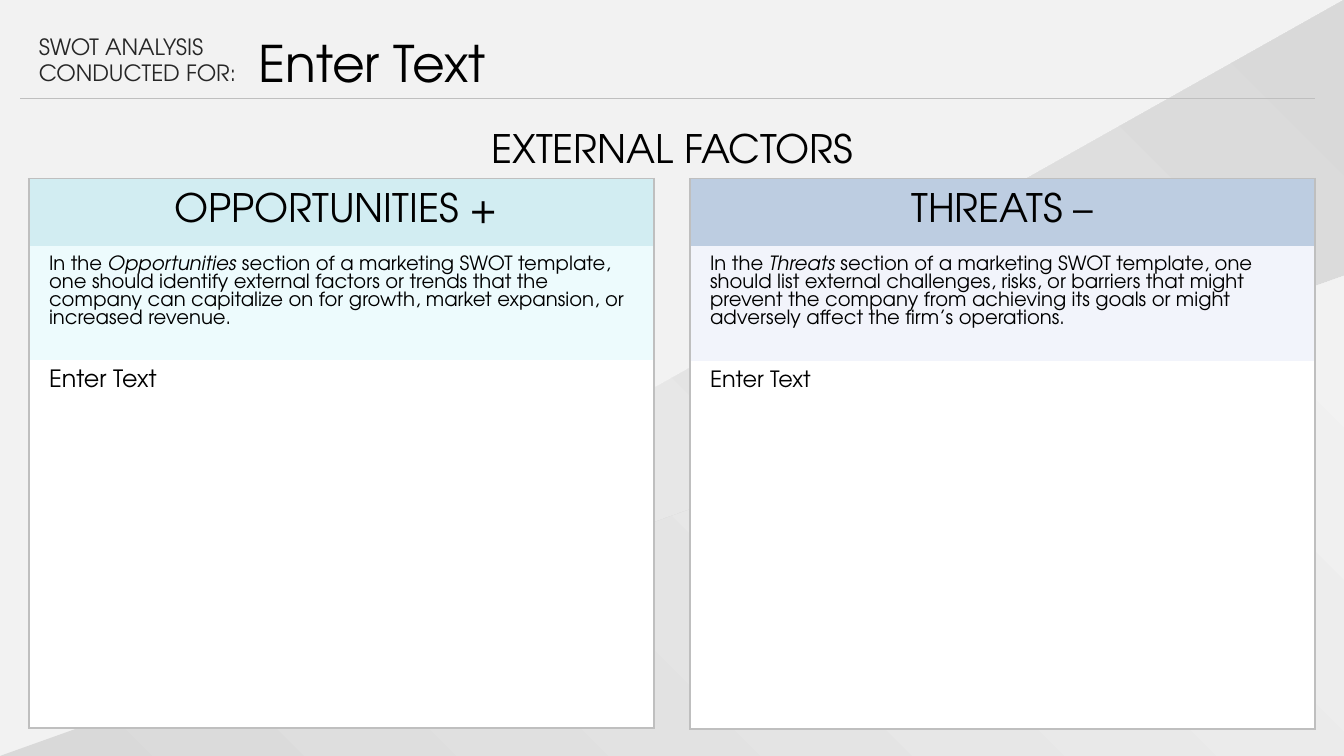
"""Build the external factors slide of a SWOT analysis."""
from lxml import etree
from pptx import Presentation
from pptx.dml.color import RGBColor
from pptx.enum.shapes import MSO_CONNECTOR, MSO_SHAPE
from pptx.enum.text import MSO_ANCHOR, PP_ALIGN
from pptx.oxml import parse_xml
from pptx.oxml.ns import qn
from pptx.util import Pt

LINE = MSO_CONNECTOR.STRAIGHT
WEDGE = MSO_SHAPE.RIGHT_TRIANGLE
TOP, MIDDLE = MSO_ANCHOR.TOP, MSO_ANCHOR.MIDDLE
LEFT, CENTER = PP_ALIGN.LEFT, PP_ALIGN.CENTER
FONT = "TeX Gyre Adventor"
GREY = "BFBFBF"
NS = "http://schemas.openxmlformats.org/drawingml/2006/main"


def paint(hue):
    return RGBColor.from_string(hue)


def write(frame, text, size, hue="000000", align=LEFT, italic="", gap=0):
    frame.word_wrap = True
    para = frame.paragraphs[0]
    para.alignment = align
    para.space_after = Pt(gap)
    parts = text.partition(italic) if italic else [text]
    for part in parts:
        run = para.add_run()
        run.text = part
        run.font.name = FONT
        run.font.size = Pt(size)
        run.font.italic = part == italic
        run.font.color.rgb = paint(hue)


deck = Presentation()
deck.slide_width, deck.slide_height = Pt(960), Pt(540)
slide = deck.slides.add_slide(deck.slide_layouts[6])
slide.background.fill.solid()
slide.background.fill.fore_color.rgb = paint("F2F2F2")
shapes = slide.shapes

for top, high, hues in [(0, 540, ("F2F2F2", "D9D9D9")), (197, 343, ("D9D9D9", "F2F2F2"))]:
    wedge = shapes.add_shape(WEDGE, 0, Pt(top), Pt(960), Pt(high))
    wedge.shadow.inherit = False
    wedge.line.fill.background()
    wedge.element.spPr.get_or_add_xfrm().set("flipH", "1")
    wedge.fill.gradient()
    wedge.fill.gradient_angle = 135
    for stop, hue, spot in zip(wedge.fill.gradient_stops, hues, (0, 1)):
        stop.color.rgb = paint(hue)
        stop.position = spot

labels = [
    (20.6, 19.8, 171, 46, "SWOT ANALYSIS CONDUCTED FOR:", 16, "262626", LEFT),
    (177.6, 19.5, 734, 51, "Enter Text", 36, "000000", LEFT),
    (20.6, 85, 919, 41, "EXTERNAL FACTORS", 28, "000000", CENTER),
]
for left, top, wide, high, text, size, hue, align in labels:
    box = shapes.add_textbox(Pt(left), Pt(top), Pt(wide), Pt(high))
    write(box.text_frame, text, size, hue, align)

rule = shapes.add_connector(LINE, Pt(14.5), Pt(70), Pt(939.5), Pt(70))
rule.line.color.rgb = paint(GREY)
rule.line.width = Pt(0.5)
etree.SubElement(rule.element.spPr, qn("a:effectLst"))

panels = [
    (20.6, "OPPORTUNITIES + ", "Opportunities",
     "In the Opportunities section of a marketing SWOT template, one should identify "
     "external factors or trends that the company can capitalize on for growth, "
     "market expansion, or increased revenue.", 17,
     ("D2EDF2", "EDFBFD", "FFFFFF"), (48, 81.6, 262.8)),
    (492.8, "THREATS –", "Threats",
     "In the Threats section of a marketing SWOT template, one should list external "
     "challenges, risks, or barriers that might prevent the company from achieving "
     "its goals or might adversely affect the firm’s operations.", 16,
     ("BDCDE1", "F2F4FB", "FFFFFF"), (48, 82.2, 262.8)),
]
for left, title, term, about, size, hues, heights in panels:
    table = shapes.add_table(3, 1, Pt(left), Pt(127.5), Pt(446.5), Pt(sum(heights))).table
    texts = [
        (title, 28, {"align": CENTER}),
        (about, 14, {"italic": term}),
        ("Enter Text", size, {"gap": 6}),
    ]
    for row, (text, points, style) in enumerate(texts):
        table.rows[row].height = Pt(heights[row])
        cell = table.cell(row, 0)
        cell.margin_left = cell.margin_right = Pt(14.4)
        cell.margin_top = cell.margin_bottom = Pt(7.2 if row else 0)
        cell.vertical_anchor = TOP if row else MIDDLE
        cell.fill.solid()
        cell.fill.fore_color.rgb = paint(hues[row])
        write(cell.text_frame, text, points, **style)
        edges = {"L": 1.5, "R": 1.5, "T": 0 if row else 1, "B": 1.5 if row == 2 else 0}
        for spot, (side, width) in enumerate(edges.items()):
            ink = f'<a:solidFill><a:srgbClr val="{GREY}"/></a:solidFill>' if width else "<a:noFill/>"
            edge = parse_xml(f'<a:ln{side} xmlns:a="{NS}" w="{Pt(width)}">{ink}</a:ln{side}>')
            cell._tc.get_or_add_tcPr().insert(spot, edge)

deck.save("out.pptx")
